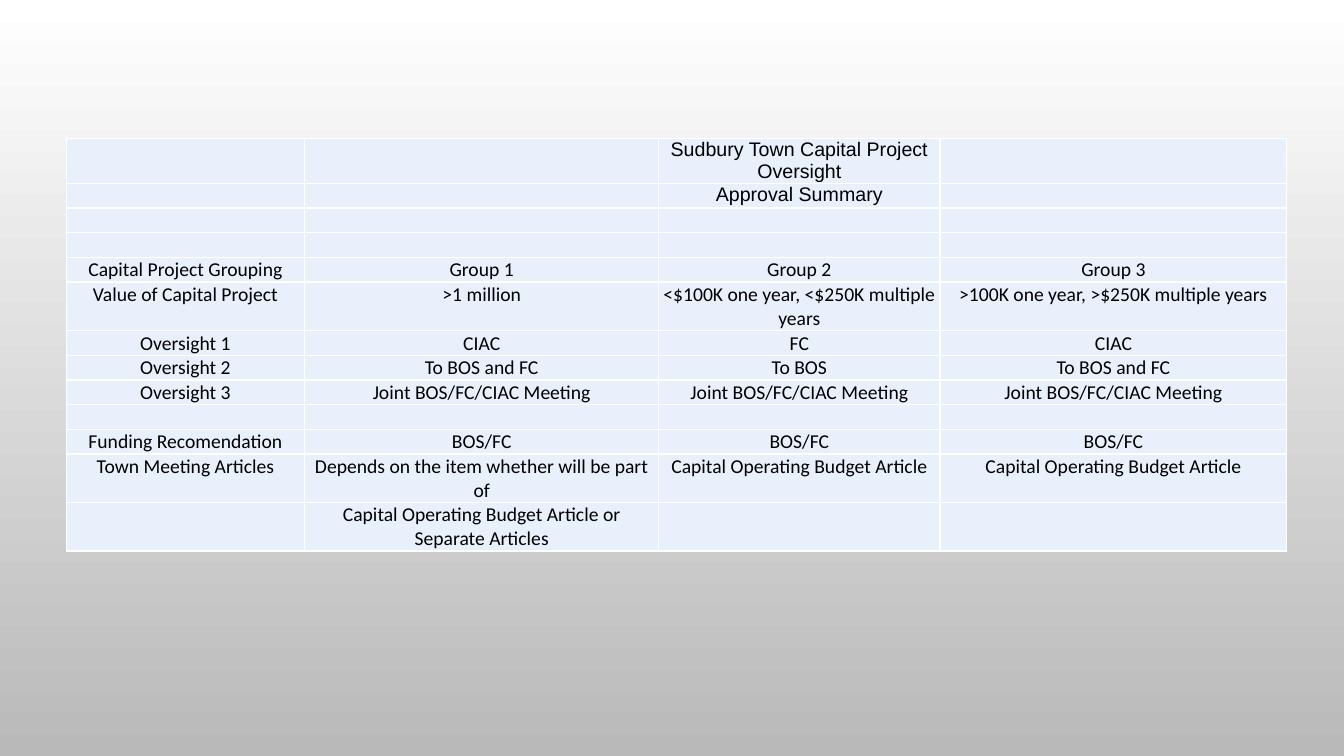
from lxml.etree import SubElement
from pptx import Presentation
from pptx.dml.color import RGBColor as Rgb
from pptx.enum.text import MSO_ANCHOR as Anchor, PP_ALIGN as Align
from pptx.oxml import parse_xml
from pptx.oxml.ns import nsdecls, qn
from pptx.util import Cm, Pt

# Content
JOINT = "Joint BOS/FC/CIAC Meeting"
BUDGET = "Capital Operating Budget Article"
ROWS = [
    ("", "", "Sudbury Town Capital Project Oversight", ""),
    ("", "", "Approval Summary", ""),
    ("", "", "", ""),
    ("", "", "", ""),
    ("Capital Project Grouping", "Group 1", "Group 2", "Group 3"),
    ("Value of Capital Project", ">1 million",
     "<$100K one year, <$250K multiple years",
     ">100K one year, >$250K multiple years"),
    ("Oversight 1", "CIAC", "FC", "CIAC"),
    ("Oversight 2", "To BOS and FC", "To BOS", "To BOS and FC"),
    ("Oversight 3", JOINT, JOINT, JOINT),
    ("", "", "", ""),
    ("Funding Recomendation", "BOS/FC", "BOS/FC", "BOS/FC"),
    ("Town Meeting Articles", "Depends on the item whether will be part of",
     BUDGET, BUDGET),
    ("", "Capital Operating Budget Article or Separate Articles", "", ""),
]
TITLE_ROWS = 2
BOTTOM_ANCHORED = (11, 1)

THEME = {
    "background": ("FFFFFF", "B9B9B9"),
    "cell": "E8F0FC",
    "border": "FFFFFF",
    "border_width": Pt(1),
    "text": "000000",
    "size": Pt(14),
    "title_font": "Arial",
    "body_font": "Calibri",
}

# Layout
LEFT, TOP = Cm(1.67), Cm(3.48)
COLUMN_WIDTHS = [Cm(width) for width in (6.01, 8.92, 7.09, 8.74)]
LINE_HEIGHT, TITLE_HEIGHT, DOUBLE_HEIGHT = Cm(0.62), Cm(1.14), Cm(1.22)
TWO_LINE_ROWS = {0: TITLE_HEIGHT, 5: DOUBLE_HEIGHT,
                 11: DOUBLE_HEIGHT, 12: DOUBLE_HEIGHT}
ROW_HEIGHTS = [TWO_LINE_ROWS.get(index, LINE_HEIGHT)
               for index in range(len(ROWS))]
CELL_FORMAT = {"margin_left": Cm(0.02), "margin_right": Cm(0.02),
               "margin_top": Cm(0.02), "margin_bottom": 0}


def set_format(target, values):
    for name, value in values.items():
        setattr(target, name, value)


def add_borders(cell):
    properties = cell._tc.get_or_add_tcPr()
    for position, side in enumerate(("lnL", "lnR", "lnT", "lnB")):
        properties.insert(position, parse_xml(
            f'<a:{side} {nsdecls("a")} w="{THEME["border_width"]}">'
            f'<a:solidFill><a:srgbClr val="{THEME["border"]}"/></a:solidFill>'
            f'</a:{side}>'))


def fill_cell(cell, text, font_name, anchor):
    set_format(cell, {**CELL_FORMAT, "vertical_anchor": anchor})
    cell.fill.solid()
    cell.fill.fore_color.rgb = Rgb.from_string(THEME["cell"])
    add_borders(cell)
    paragraph = cell.text_frame.paragraphs[0]
    paragraph.alignment = Align.CENTER
    if text:
        run = paragraph.add_run()
        run.text = text
        set_format(run.font, {"name": font_name, "size": THEME["size"],
                              "bold": False})
        run.font.color.rgb = Rgb.from_string(THEME["text"])
    else:
        # The end mark keeps an empty row as low as a line of text
        end_mark = SubElement(paragraph._p, qn("a:endParaRPr"))
        end_mark.set("sz", str(int(THEME["size"].pt * 100)))


def main():
    presentation = Presentation()
    set_format(presentation, {"slide_width": Cm(33.87),
                              "slide_height": Cm(19.05)})
    slide = presentation.slides.add_slide(presentation.slide_layouts[6])

    # Background, light at the top
    background = slide.background.fill
    background.gradient()
    background.gradient_angle = 270
    for stop, position, color in zip(background.gradient_stops, (0, 1),
                                     THEME["background"]):
        stop.position = position
        stop.color.rgb = Rgb.from_string(color)

    # Oversight table
    table = slide.shapes.add_table(
        len(ROWS), len(COLUMN_WIDTHS), LEFT, TOP,
        sum(COLUMN_WIDTHS), sum(ROW_HEIGHTS)).table
    set_format(table, {"first_row": False, "horz_banding": False})
    for column, width in zip(table.columns, COLUMN_WIDTHS):
        column.width = width
    for row_index, texts in enumerate(ROWS):
        table.rows[row_index].height = ROW_HEIGHTS[row_index]
        font_name = THEME["title_font" if row_index < TITLE_ROWS
                          else "body_font"]
        for column_index, text in enumerate(texts):
            at_bottom = (row_index, column_index) == BOTTOM_ANCHORED
            fill_cell(table.cell(row_index, column_index), text, font_name,
                      Anchor.BOTTOM if at_bottom else Anchor.TOP)

    presentation.save("out.pptx")


if __name__ == "__main__":
    main()
